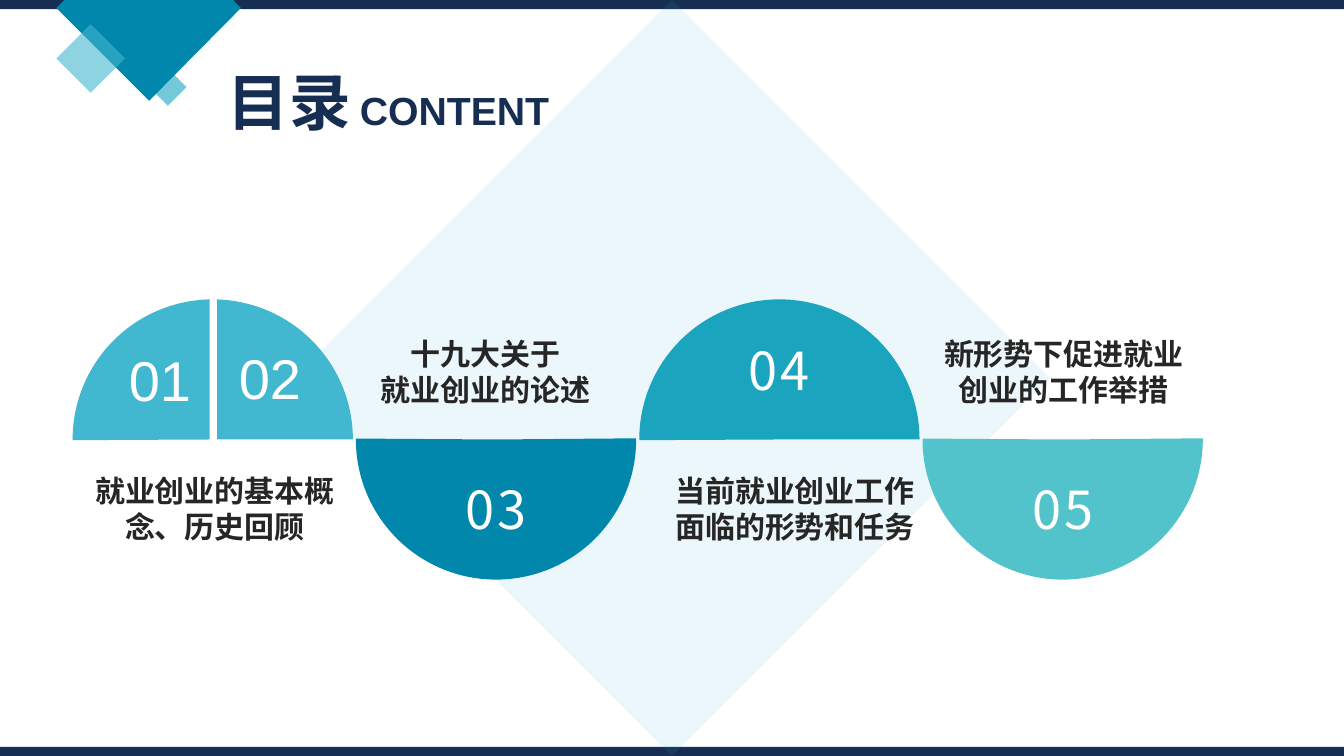
from lxml import etree
from pptx import Presentation
from pptx.dml.color import RGBColor
from pptx.enum.shapes import MSO_SHAPE
from pptx.enum.text import MSO_ANCHOR, PP_ALIGN
from pptx.oxml.ns import qn
from pptx.util import Inches, Pt

ARC, DIAMOND = MSO_SHAPE.ARC, MSO_SHAPE.DIAMOND
RECTANGLE, ROUNDED = MSO_SHAPE.RECTANGLE, MSO_SHAPE.ROUNDED_RECTANGLE
MIDDLE = MSO_ANCHOR.MIDDLE
LEFT, CENTER = PP_ALIGN.LEFT, PP_ALIGN.CENTER

COLORS = {
    "navy": "152E52", "deep": "0187AC", "teal": "1AA4BE", "sky": "41B7D0",
    "aqua": "52C3CB", "ink": "262626", "white": "FFFFFF",
}
LATIN, CJK = "Arial", "Noto Sans CJK SC"
WIDTH, HEIGHT, BAR = 13.33, 7.5, 0.09
DIAMETER, STEP = 2.78, 2.81
# Arc adjustments are angles in 60000ths of a degree, divided by 100000
HALF_ANGLES = {"upper": (107.824, 0), "lower": (215.716, 108.229)}
LABEL_OFFSET = {"upper": 1.67, "lower": 0.31}

# half, colour, number, label lines, label offset from the arc, label width
SECTIONS = [
    ("upper", "sky", None, ["就业创业的基本概念、历史回顾"], 0.1, 2.62),
    ("lower", "deep", "03", ["十九大关于", "就业创业的论述"], -0.04, 2.65),
    ("upper", "teal", "04", ["当前就业创业工作面临的形势和任务"], 0.21, 2.67),
    ("lower", "aqua", "05", ["新形势下促进就业创业的工作举措"], 0, 2.8),
]


def paint(shape, color, alpha=None):
    """Give a flat fill without line or shadow; alpha is in percent."""
    shape.shadow.inherit = False
    shape.line.fill.background()
    shape.fill.solid()
    shape.fill.fore_color.rgb = RGBColor.from_string(COLORS[color])
    if alpha is not None:
        tint = shape.fill._xPr.find(qn("a:solidFill"))[0]
        etree.SubElement(tint, qn("a:alpha")).set("val", str(alpha * 1000))


def add_block(shapes, kind, box, color, alpha=None):
    block = shapes.add_shape(kind, *map(Inches, box))
    paint(block, color, alpha)
    return block


def add_span(para, text, size, color, font=LATIN, bold=False, spacing=None):
    span = para.add_run()
    span.text = text
    span.font.size = Pt(size)
    span.font.name = font
    span.font.bold = bold
    span.font.color.rgb = RGBColor.from_string(COLORS[color])
    properties = span.font._element
    etree.SubElement(properties, qn("a:ea")).set("typeface", CJK)
    if spacing is not None:
        properties.set("spc", str(round(spacing * 100)))


def add_text(shapes, box, lines, align=LEFT, **style):
    frame = shapes.add_textbox(*map(Inches, box)).text_frame
    frame.word_wrap = True
    for index, line in enumerate(lines):
        para = frame.add_paragraph() if index else frame.paragraphs[0]
        para.alignment = align
        add_span(para, line, **style)


def add_corner(page, left, top):
    """Diamonds in the corner, the large one cut off by the slide edge."""
    add_block(page.shapes, DIAMOND, (left + 0.92, top + 0.68, 0.37, 0.37), "teal", 60)
    add_block(page.shapes, RECTANGLE, (0, 0, WIDTH, BAR), "navy")
    outline = [(0.08, 0), (1.75, 0), (1.83, 0.08), (0.92, 1), (0, 0.08)]
    points = [(Inches(left + x), Inches(top + y)) for x, y in outline]
    builder = page.shapes.build_freeform(*points[0])
    builder.add_line_segments(points[1:], close=True)
    paint(builder.convert_to_shape(), "deep")
    add_block(page.shapes, DIAMOND, (left, top + 0.24, 0.68, 0.68), "sky", 60)


def add_title(page, box):
    frame = page.shapes.add_textbox(*map(Inches, box)).text_frame
    frame.word_wrap = True
    para = frame.paragraphs[0]
    para.line_spacing = 1.14
    add_span(para, "目录", 44, "navy", bold=True)
    add_span(para, " CONTENT", 28, "navy", bold=True)


def add_section(page, left, top, half, color, number, lines, offset, width):
    """Half disc with its number, and its label on the other side."""
    shapes = page.shapes.add_group_shape().shapes
    disc = add_block(shapes, ARC, (left, top, DIAMETER, DIAMETER), color)
    disc.adjustments[0], disc.adjustments[1] = HALF_ANGLES[half]
    if number:
        frame = disc.text_frame
        frame.vertical_anchor = MIDDLE
        frame.paragraphs[0].alignment = CENTER
        add_span(frame.paragraphs[0], number, 37.4, "white", font=CJK, spacing=2.1)
    label_box = (left + offset, top + LABEL_OFFSET[half], width, 0.82)
    add_text(shapes, label_box, lines, CENTER, size=21.4, color="ink", bold=True)
    if not number:
        add_split(shapes, left, top)


def add_split(shapes, left, top):
    """Divider and two numbers inside the first half disc."""
    divider = add_block(shapes, ROUNDED, (left + 1.37, top, 0.05, DIAMETER / 2), "white")
    divider.line.color.rgb = RGBColor.from_string(COLORS["white"])
    divider.line.width = Pt(1.5)
    for number, x, y in (("01", 0.46, 0.41), ("02", 1.55, 0.39)):
        add_text(shapes, (left + x, top + y, 0.87, 0.77), [number], size=40, color="white")


def main():
    deck = Presentation()
    deck.slide_width, deck.slide_height = Inches(WIDTH), Inches(HEIGHT)
    page = deck.slides.add_slide(deck.slide_layouts[6])
    add_corner(page, 0.56, 0)
    add_block(page.shapes, RECTANGLE, (0, HEIGHT - BAR, WIDTH, BAR), "navy")
    add_title(page, (2.16, 0.48, 4.47, 0.94))
    add_block(page.shapes, DIAMOND, ((WIDTH - HEIGHT) / 2, 0, HEIGHT, HEIGHT), "sky", 10)
    for index, section in reversed(list(enumerate(SECTIONS))):
        add_section(page, 0.72 + index * STEP, 2.97, *section)
    deck.save("out.pptx")


if __name__ == "__main__":
    main()
